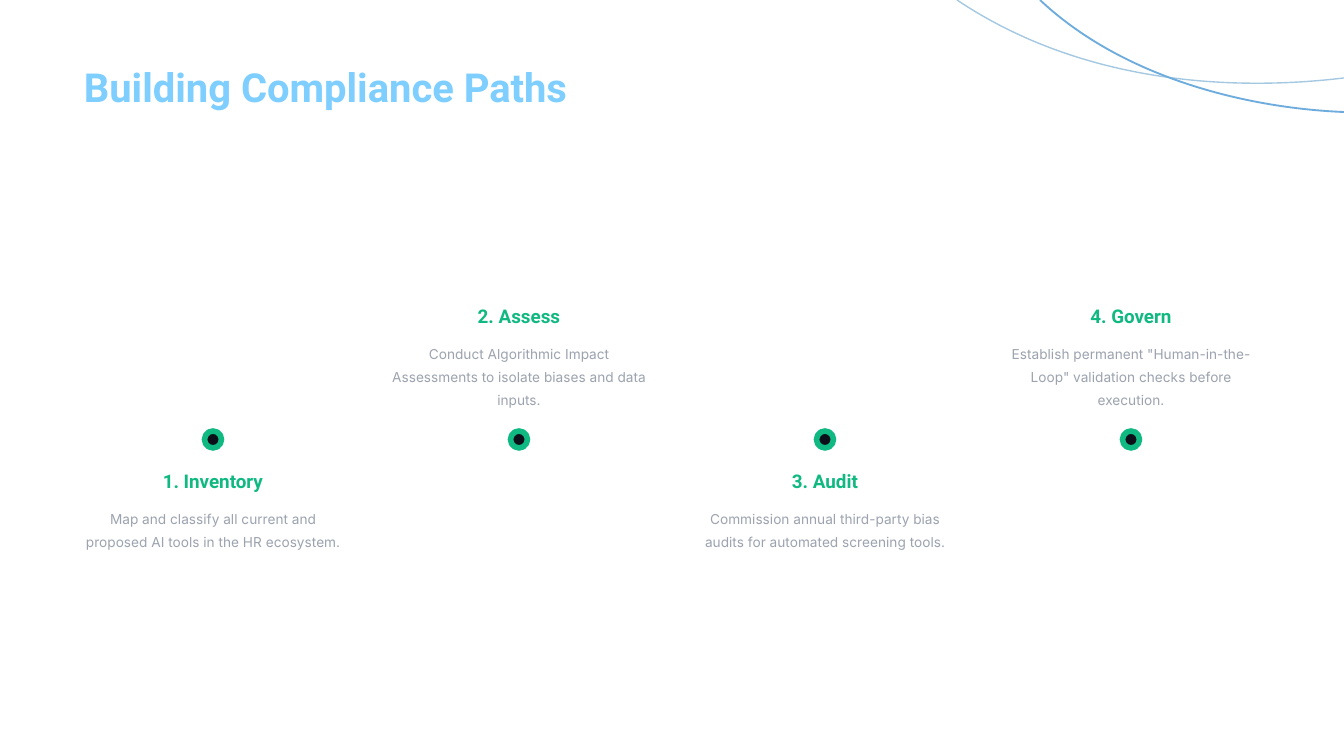
from lxml import etree
from pptx import Presentation
from pptx.dml.color import RGBColor
from pptx.enum.shapes import MSO_SHAPE
from pptx.enum.text import MSO_AUTO_SIZE, PP_ALIGN
from pptx.oxml.ns import qn
from pptx.util import Pt

EMU_PER_PX = 914400 / 134.4
ROUNDED = MSO_SHAPE.ROUNDED_RECTANGLE
FIT_SHAPE = MSO_AUTO_SIZE.SHAPE_TO_FIT_TEXT
LEFT, CENTER = PP_ALIGN.LEFT, PP_ALIGN.CENTER

COLORS = {
    "title": "7ECEFF",
    "accent": "10B981",
    "detail": "9CA3AF",
    "dot": "0B0F19",
    "pale_arc": "A4C8E1",
    "strong_arc": "6EACDD",
}

STEPS = [
    ("1. Inventory", "Map and classify all current and proposed AI tools in the HR ecosystem."),
    ("2. Assess", "Conduct Algorithmic Impact Assessments to isolate biases and data inputs."),
    ("3. Audit", "Commission annual third-party bias audits for automated screening tools."),
    ("4. Govern", 'Establish permanent "Human-in-the-Loop" validation checks before execution.'),
]
FIRST_CENTER, STEP_PITCH = 213, 306
HEADING_TOP_BELOW, HEADING_TOP_ABOVE = 470, 305
DETAIL_OFFSET = 34
HEADING_WIDTH, DETAIL_WIDTH = 271, 258
DOT_TOP, DOT_SIZE = 431, 17


def px(length):
    return round(length * EMU_PER_PX)


def rgb(name):
    return RGBColor.from_string(COLORS[name])


def add_text(slide, text, left, top, width, height, font_name, size, color,
             bold=False, align=CENTER, spacing=None):
    frame = slide.shapes.add_textbox(px(left), px(top), px(width), px(height)).text_frame
    frame.margin_left = frame.margin_right = frame.margin_top = frame.margin_bottom = 0
    frame.word_wrap = True
    frame.auto_size = FIT_SHAPE
    paragraph = frame.paragraphs[0]
    paragraph.text = text
    paragraph.alignment = align
    if spacing:
        paragraph.line_spacing = spacing
    font = paragraph.font
    font.name, font.size, font.bold = font_name, Pt(size), bold
    font.color.rgb = rgb(color)


def add_arc(slide, start, controls, color, weight):
    builder = slide.shapes.build_freeform(*start, scale=EMU_PER_PX)
    builder.add_line_segments(controls, close=False)
    arc = builder.convert_to_shape()
    arc.shadow.inherit = False
    arc.fill.background()
    arc.line.color.rgb = rgb(color)
    arc.line.width = Pt(weight)
    # Turn the three control segments into one cubic curve
    outline = next(arc.element.iter(qn("a:path")))
    curve = etree.SubElement(outline, qn("a:cubicBezTo"))
    for segment in outline.findall(qn("a:lnTo")):
        curve.append(segment[0])
        outline.remove(segment)


def add_dot(slide, center):
    dot = slide.shapes.add_shape(ROUNDED, px(center - DOT_SIZE / 2), px(DOT_TOP),
                                 px(DOT_SIZE), px(DOT_SIZE))
    dot.adjustments[0] = 0.5
    dot.shadow.inherit = False
    dot.fill.solid()
    dot.fill.fore_color.rgb = rgb("dot")
    dot.line.color.rgb = rgb("accent")
    dot.line.width = Pt(3)


def add_step(slide, index, heading, detail):
    center = FIRST_CENTER + index * STEP_PITCH
    # Steps alternate below and above the row of dots
    top = HEADING_TOP_ABOVE if index % 2 else HEADING_TOP_BELOW
    add_text(slide, heading, center - HEADING_WIDTH / 2, top, HEADING_WIDTH, 23,
             "Roboto", 10.1, "accent", bold=True)
    add_text(slide, detail, center - DETAIL_WIDTH / 2, top + DETAIL_OFFSET,
             DETAIL_WIDTH, 46, "Inter", 7.3, "detail", spacing=1.4)
    add_dot(slide, center)


def main():
    deck = Presentation()
    deck.slide_width, deck.slide_height = px(1344), px(756)
    slide = deck.slides.add_slide(deck.slide_layouts[6])

    # Corner arcs
    add_arc(slide, (1344, 78), [(1253, 89), (1093, 91), (957, 0)], "pale_arc", 0.75)
    add_arc(slide, (1344, 112), [(1245, 108), (1122, 77), (1040, 0)], "strong_arc", 1)

    # Title
    add_text(slide, "Building Compliance Paths", 84, 63, 1235, 48,
             "Roboto", 21.4, "title", bold=True, align=LEFT)

    # Timeline
    for index, (heading, detail) in enumerate(STEPS):
        add_step(slide, index, heading, detail)

    deck.save("out.pptx")


if __name__ == "__main__":
    main()
